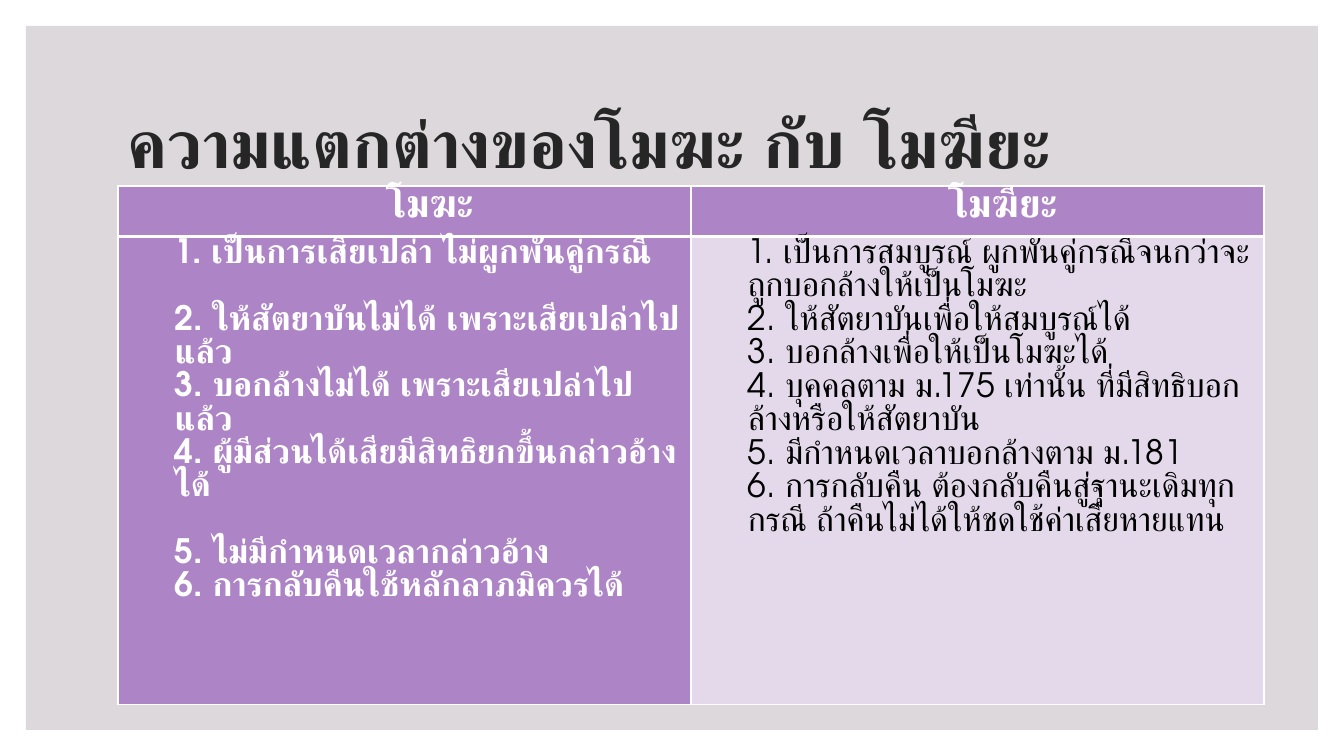
import pptx
import pptx.dml.color
import pptx.enum.shapes
import pptx.enum.text
import pptx.oxml
import pptx.oxml.ns
import pptx.util
from dataclasses import dataclass

PX = 914400 / 100.8
TITLE = "ความแตกต่างของโมฆะ กับ โมฆียะ"
HEADERS = ["โมฆะ", "โมฆียะ"]
VOID = [
    "1. เป็นการเสียเปล่า ไม่ผูกพันคู่กรณี",
    "2. ให้สัตยาบันไม่ได้ เพราะเสียเปล่าไปแล้ว",
    "3. บอกล้างไม่ได้ เพราะเสียเปล่าไปแล้ว",
    "4. ผู้มีส่วนได้เสียมีสิทธิยกขึ้นกล่าวอ้างได้",
    "5. ไม่มีกำหนดเวลากล่าวอ้าง",
    "6. การกลับคืนใช้หลักลาภมิควรได้",
]
VOIDABLE = [
    "1. เป็นการสมบูรณ์ ผูกพันคู่กรณีจนกว่าจะถูกบอกล้างให้เป็นโมฆะ",
    "2. ให้สัตยาบันเพื่อให้สมบูรณ์ได้",
    "3. บอกล้างเพื่อให้เป็นโมฆะได้",
    "4. บุคคลตาม ม.175 เท่านั้น ที่มีสิทธิบอกล้างหรือให้สัตยาบัน",
    "5. มีกำหนดเวลาบอกล้างตาม ม.181",
    "6. การกลับคืน ต้องกลับคืนสู่ฐานะเดิมทุกกรณี ถ้าคืนไม่ได้ให้ชดใช้ค่าเสียหายแทน",
]
VOID_GAPS = {1, 4}


@dataclass(frozen=True)
class Theme:
    font: str = "TeX Gyre Adventor"
    panel: str = "DCD8DC"
    title: str = "262626"
    purple: str = "AD84C6"
    lilac: str = "E3D9EA"
    white: str = "FFFFFF"
    black: str = "000000"
    title_size: int = 48
    header_size: int = 28
    body_size: int = 24


def px(n):
    return pptx.util.Emu(round(n * PX))


def rgb(color):
    return pptx.dml.color.RGBColor.from_string(color)


class Deck:
    def __init__(self, theme):
        self.theme = theme
        self.prs = pptx.Presentation()
        self.prs.slide_width, self.prs.slide_height = px(1344), px(756)
        self.s = self.prs.slides.add_slide(self.prs.slide_layouts[6])

    def panel(self, x, y, w, h, color):
        sp = self.s.shapes.add_shape(
            pptx.enum.shapes.MSO_SHAPE.RECTANGLE, px(x), px(y), px(w), px(h))
        sp.shadow.inherit = False
        sp.fill.solid()
        sp.fill.fore_color.rgb = rgb(color)
        sp.line.fill.background()

    def paragraphs(self, tf, lines, size, color, bold, spacing, gaps=()):
        tf.word_wrap = True
        for i, line in enumerate(lines):
            p = tf.paragraphs[0] if i == 0 else tf.add_paragraph()
            p.add_run().text = line
            p.line_spacing = spacing
            p.space_before = pptx.util.Pt(24 if i in gaps else 0)
            p.font.name, p.font.size, p.font.bold = self.theme.font, pptx.util.Pt(size), bold
            p.font.color.rgb = rgb(color)
            props = p._p.pPr.find(pptx.oxml.ns.qn("a:defRPr"))
            props.append(pptx.oxml.parse_xml(
                f'<a:cs {pptx.oxml.ns.nsdecls("a")} typeface="{self.theme.font}"/>'))

    def title(self, x, y, w, h, text):
        tf = self.s.shapes.add_textbox(px(x), px(y), px(w), px(h)).text_frame
        tf.vertical_anchor = pptx.enum.text.MSO_ANCHOR.MIDDLE
        self.paragraphs(tf, [text], self.theme.title_size, self.theme.title, True, 0.9)

    def table(self, x, y, widths, heights):
        table = self.s.shapes.add_table(
            len(heights), len(widths), px(x), px(y), px(sum(widths)), px(sum(heights))).table
        for column, w in zip(table.columns, widths):
            column.width = px(w)
        for row, h in zip(table.rows, heights):
            row.height = px(h)
        return table

    def cell(self, cell, lines, size, color, fill, bold, borders, align=None, gaps=()):
        cell.margin_left = cell.margin_right = px(7)
        cell.margin_top = cell.margin_bottom = 0
        tcPr = cell._tc.get_or_add_tcPr()
        for side, width in zip("LRTB", borders):
            tcPr.append(pptx.oxml.parse_xml(
                f'<a:ln{side} {pptx.oxml.ns.nsdecls("a")} w="{pptx.util.Pt(width)}"><a:solidFill>'
                f'<a:srgbClr val="{self.theme.white}"/></a:solidFill></a:ln{side}>'))
        cell.fill.solid()
        cell.fill.fore_color.rgb = rgb(fill)
        self.paragraphs(cell.text_frame, lines, size, color, bold, 1.07, gaps)
        for p in cell.text_frame.paragraphs:
            p.alignment = align
            p._p.get_or_add_pPr().set("marL", str(px(50)))


def main():
    theme = Theme()
    deck = Deck(theme)
    deck.panel(26, 26, 1292, 704, theme.panel)
    deck.title(118, 71, 1109, 151, TITLE)
    table = deck.table(118, 186, [573, 573], [42, 468])
    for col, header in enumerate(HEADERS):
        deck.cell(table.cell(0, col), [header], theme.header_size, theme.white, theme.purple,
                  True, (1, 1, 1, 3), pptx.enum.text.PP_ALIGN.CENTER)
    body = (1, 1, 3, 1)
    deck.cell(table.cell(1, 0), VOID, theme.body_size, theme.white, theme.purple,
              True, body, gaps=VOID_GAPS)
    deck.cell(table.cell(1, 1), VOIDABLE, theme.body_size, theme.black, theme.lilac,
              False, body)
    deck.prs.save("out.pptx")


if __name__ == "__main__":
    main()
